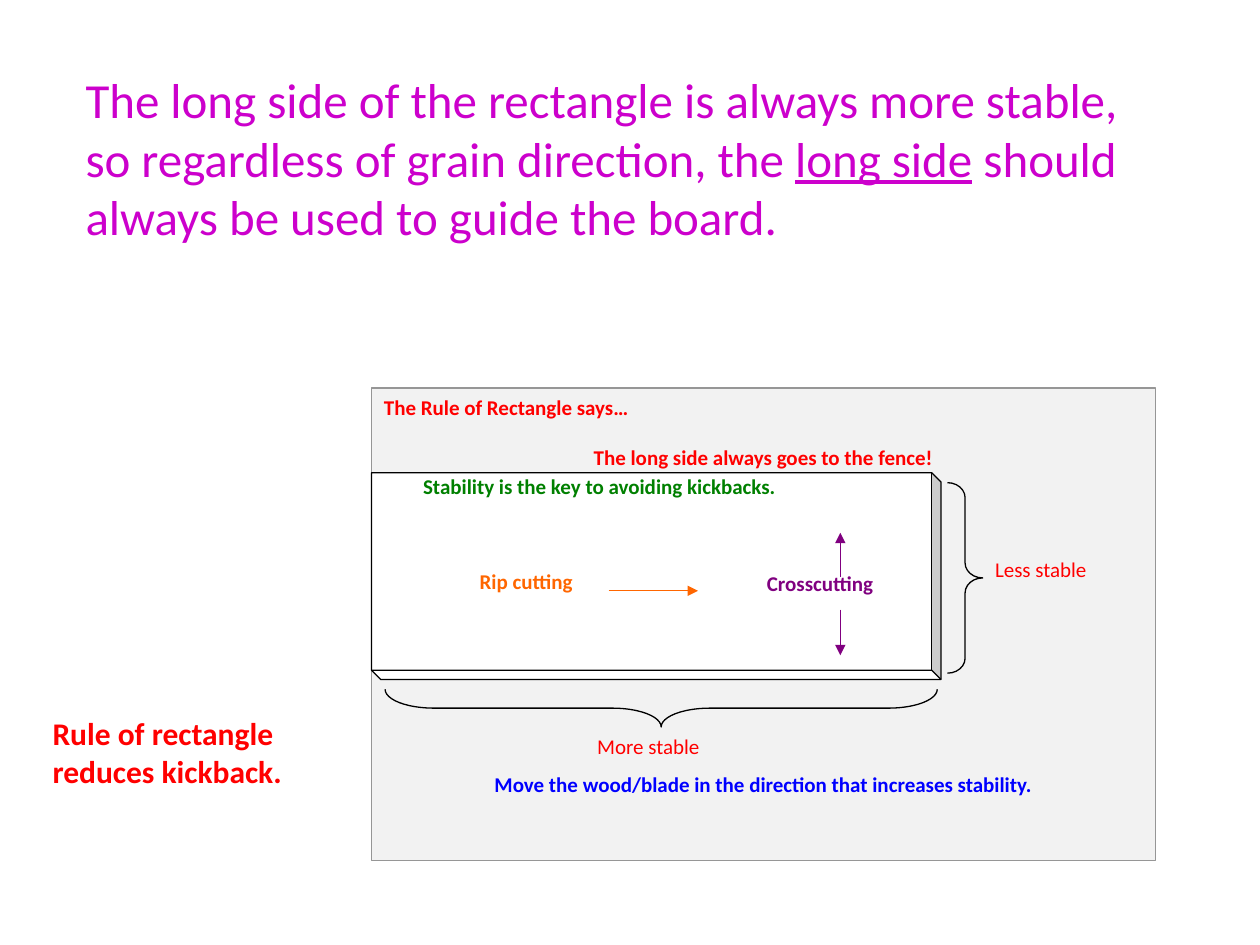
from lxml.etree import SubElement
from pptx import Presentation
from pptx.dml.color import RGBColor
from pptx.enum.shapes import MSO_CONNECTOR, MSO_SHAPE
from pptx.enum.text import MSO_ANCHOR, MSO_AUTO_SIZE, PP_ALIGN
from pptx.oxml.ns import qn
from pptx.util import Cm, Pt

MAGENTA = RGBColor(0xCC, 0x00, 0xCC)
RED = RGBColor(0xFF, 0x00, 0x00)
BLUE = RGBColor(0x00, 0x00, 0xFF)
GREEN = RGBColor(0x00, 0x80, 0x00)
ORANGE = RGBColor(0xFF, 0x66, 0x00)
PURPLE = RGBColor(0x80, 0x00, 0x80)
SILVER = RGBColor(0xC0, 0xC0, 0xC0)
GRAY = RGBColor(0x96, 0x96, 0x96)
BLACK = RGBColor(0x00, 0x00, 0x00)
WHITE = RGBColor(0xFF, 0xFF, 0xFF)

# (text, underlined)
TITLE = [
    ("The long side of the rectangle is always more stable, "
     "so regardless of grain direction, the ", False),
    ("long side", True),
    (" should always be used to guide the board.", False),
]
TITLE_BOX = (1.47, 1.27, 22.23, 3.84)

# (text, alignment, colour, space before in points)
PANEL_LINES = [
    ("The Rule of Rectangle says…", PP_ALIGN.LEFT, RED, 0),
    ("The long side always goes to the fence!", PP_ALIGN.CENTER, RED, 14.6),
    ("Move the wood/blade in the direction that increases stability.",
     PP_ALIGN.CENTER, BLUE, 172),
]
PANEL_BOX = (7.49, 7.82, 15.8, 9.53)
BOARD_BOX = (7.49, 9.53, 11.48, 4.17)

# (box, rotation, curl of the ends)
BRACES = [
    ((19.1, 9.73, 0.71, 3.84), 180, 0.424),
    ((12.95, 8.71, 0.76, 11.13), 270, 1.292),
]
# (text, box, size, colour, bold)
LABELS = [
    ("Less stable", (19.81, 11.1, 3.23, 1.14), 12, RED, False),
    ("More stable", (11.79, 14.66, 3.94, 1.14), 12, RED, False),
    ("Rip cutting", (9.42, 11.33, 3.94, 1.14), 12, ORANGE, True),
    ("Crosscutting", (15.21, 11.38, 3.94, 1.14), 12, PURPLE, True),
    ("Stability is the key to avoiding kickbacks.",
     (8.28, 9.42, 11.48, 0.91), 12, GREEN, True),
    ("Rule of rectangle reduces kickback.",
     (0.81, 14.27, 6.35, 1.8), 18, RED, True),
]
# (start x, start y, end x, end y, colour)
ARROWS = [
    (12.27, 11.91, 14.07, 11.91, ORANGE),
    (16.94, 12.29, 16.94, 13.21, PURPLE),
    (16.94, 11.63, 16.94, 10.74, PURPLE),
]


def cm(values):
    return [Cm(v) for v in values]


def style(p, size, color, bold=False, align=PP_ALIGN.LEFT):
    p.alignment = align
    p.font.name = "Calibri"
    p.font.size = Pt(size)
    p.font.bold = bold
    p.font.color.rgb = color


def add_outlined(slide, kind, box, line, fill=None):
    sp = slide.shapes.add_shape(kind, *cm(box))
    sp.shadow.inherit = False
    sp.line.color.rgb = line
    sp.line.width = Pt(0.75)
    if fill is None:
        sp.fill.background()
    else:
        sp.fill.solid()
        sp.fill.fore_color.rgb = fill
    return sp


def add_title(slide):
    title = slide.shapes.title
    title.left, title.top, title.width, title.height = cm(TITLE_BOX)
    tf = title.text_frame
    tf.word_wrap = True
    tf.auto_size = MSO_AUTO_SIZE.NONE
    tf.vertical_anchor = MSO_ANCHOR.TOP
    p = tf.paragraphs[0]
    style(p, 28, MAGENTA)
    for text, underlined in TITLE:
        r = p.add_run()
        r.text = text
        r.font.underline = underlined


def add_panel(slide):
    sp = add_outlined(slide, MSO_SHAPE.RECTANGLE, PANEL_BOX, GRAY, SILVER)
    color = sp.fill._xPr.find(qn("a:solidFill"))[0]
    SubElement(color, qn("a:alpha"), val="20000")
    tf = sp.text_frame
    tf.vertical_anchor = MSO_ANCHOR.TOP
    for i, (text, align, color, before) in enumerate(PANEL_LINES):
        p = tf.add_paragraph() if i else tf.paragraphs[0]
        p.text = text
        p.space_before = Pt(before)
        style(p, 12, color, True, align)


def add_board(slide):
    sp = add_outlined(slide, MSO_SHAPE.CUBE, BOARD_BOX, BLACK, WHITE)
    sp.adjustments[0] = 0.045
    sp._element.spPr.find(qn("a:xfrm")).set("flipV", "1")


def add_label(slide, text, box, size, color, bold):
    tf = slide.shapes.add_textbox(*cm(box)).text_frame
    tf.word_wrap = True
    p = tf.paragraphs[0]
    p.text = text
    style(p, size, color, bold)


def add_arrow(slide, *ends, color):
    c = slide.shapes.add_connector(MSO_CONNECTOR.STRAIGHT, *cm(ends))
    c.line.color.rgb = color
    c.line.width = Pt(0.75)
    SubElement(c.line._get_or_add_ln(), qn("a:tailEnd"), type="triangle")
    SubElement(c._element.spPr, qn("a:effectLst"))


def main():
    prs = Presentation()
    prs.slide_width, prs.slide_height = Cm(25.4), Cm(19.05)
    slide = prs.slides.add_slide(prs.slide_layouts[5])
    add_title(slide)
    add_panel(slide)
    add_board(slide)
    for box, rotation, curl in BRACES:
        sp = add_outlined(slide, MSO_SHAPE.LEFT_BRACE, box, BLACK)
        sp.rotation = rotation
        sp.adjustments[0] = curl
    for label in LABELS:
        add_label(slide, *label)
    for *ends, color in ARROWS:
        add_arrow(slide, *ends, color=color)
    prs.save("out.pptx")


if __name__ == "__main__":
    main()
